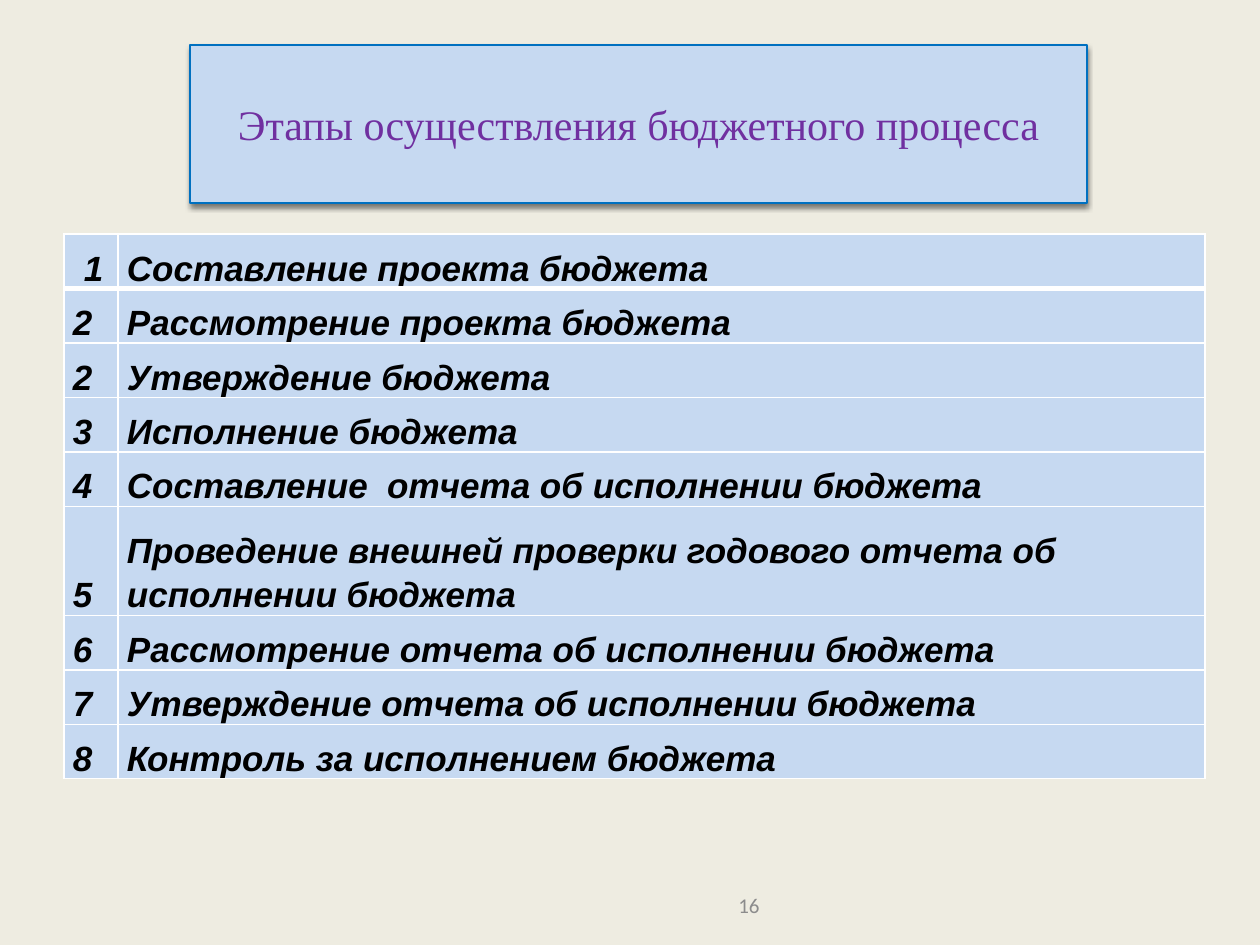
from lxml import etree
from pptx import Presentation, util as u
from pptx.dml.color import RGBColor
from pptx.enum import text
from pptx.oxml import parse_xml
from pptx.oxml.ns import nsdecls, qn

PX = u.Inches(1) // 126
COLORS = {
    "background": "EEECE1", "panel": "C6D9F1", "outline": "0070C0",
    "title": "7030A0", "body": "000000", "number": "8C8C8C", "grid": "FFFFFF",
}
STAGES = [
    ("1", "Составление проекта бюджета", 1),
    ("2", "Рассмотрение проекта бюджета", 1),
    ("2", "Утверждение бюджета", 1),
    ("3", "Исполнение бюджета", 1),
    ("4", "Составление  отчета об исполнении бюджета", 1),
    ("5", "Проведение внешней проверки годового отчета об исполнении бюджета", 2),
    ("6", "Рассмотрение отчета об исполнении бюджета", 1),
    ("7", "Утверждение отчета об исполнении бюджета", 1),
    ("8", "Контроль за исполнением бюджета", 1),
]


def rgb(name):
    return RGBColor.from_string(COLORS[name])


def write(tf, words, size, font, color, align=None, bold=False, italic=False):
    """Put one formatted run in the text frame and return its paragraph."""
    p = tf.paragraphs[0]
    p.alignment = align
    r = p.add_run()
    r.text = words
    r.font.size, r.font.name = u.Pt(size), font
    r.font.bold, r.font.italic = bold, italic
    r.font.color.rgb = rgb(color)
    return p


prs = Presentation()
prs.slide_width, prs.slide_height = 1260 * PX, 945 * PX
s = prs.slides.add_slide(prs.slide_layouts[5])
s.background.fill.solid()
s.background.fill.fore_color.rgb = rgb("background")

# Title panel with a soft shadow below
title = s.shapes.title
title.left, title.top, title.width, title.height = 190 * PX, 45 * PX, 897 * PX, 158 * PX
title.fill.solid()
title.fill.fore_color.rgb = rgb("panel")
title.line.color.rgb = rgb("outline")
title.line.width = u.Pt(0.75)
title._element.spPr.append(parse_xml(
    f'<a:effectLst {nsdecls("a")}>'
    f'<a:outerShdw blurRad="{u.Pt(3)}" dist="{u.Pt(2)}" dir="5400000" rotWithShape="0">'
    '<a:srgbClr val="000000"><a:alpha val="50000"/></a:srgbClr>'
    '</a:outerShdw></a:effectLst>'))
title.text_frame.vertical_anchor = text.MSO_ANCHOR.MIDDLE
write(title.text_frame, "Этапы осуществления бюджетного процесса", 24,
      "Times New Roman", "title", align=text.PP_ALIGN.CENTER)

# Table of stages: row height follows the number of text lines
line_height = 545 * PX // sum(lines for _, _, lines in STAGES)
table = s.shapes.add_table(len(STAGES), 2, 64 * PX, 234 * PX, 1141 * PX, 545 * PX).table
table.columns[0].width, table.columns[1].width = 54 * PX, 1087 * PX
for i, (number, stage, lines) in enumerate(STAGES):
    table.rows[i].height = line_height * lines
    for j, words in enumerate((number, stage)):
        cell = table.cell(i, j)
        cell.margin_left = cell.margin_right = 9 * PX
        cell.margin_top = cell.margin_bottom = 0
        cell.vertical_anchor = text.MSO_ANCHOR.BOTTOM
        p = write(cell.text_frame, words, 20, "Arial", "body", bold=True, italic=True)
        p.line_spacing, p.space_after = 1.15, u.Pt(10)
        if i == j == 0:
            p._p.get_or_add_pPr().set("marL", str(11 * PX))
        header_edge = {0: "lnB", 1: "lnT"}.get(i)
        tcPr = cell._tc.get_or_add_tcPr()
        for side in ("lnL", "lnR", "lnT", "lnB"):
            width = u.Pt(3 if side == header_edge else 1)
            ln = etree.SubElement(tcPr, qn(f"a:{side}"), w=str(width))
            fill = etree.SubElement(ln, qn("a:solidFill"))
            etree.SubElement(fill, qn("a:srgbClr"), val=COLORS["grid"])
        cell.fill.solid()
        cell.fill.fore_color.rgb = rgb("panel")

# Slide number
sp = s.shapes.add_textbox(520 * PX, 880 * PX, 252 * PX, 50 * PX)
sp.text_frame.word_wrap = True
sp.text_frame.vertical_anchor = text.MSO_ANCHOR.MIDDLE
write(sp.text_frame, "16", 12, "Calibri", "number", align=text.PP_ALIGN.RIGHT)

prs.save("out.pptx")
